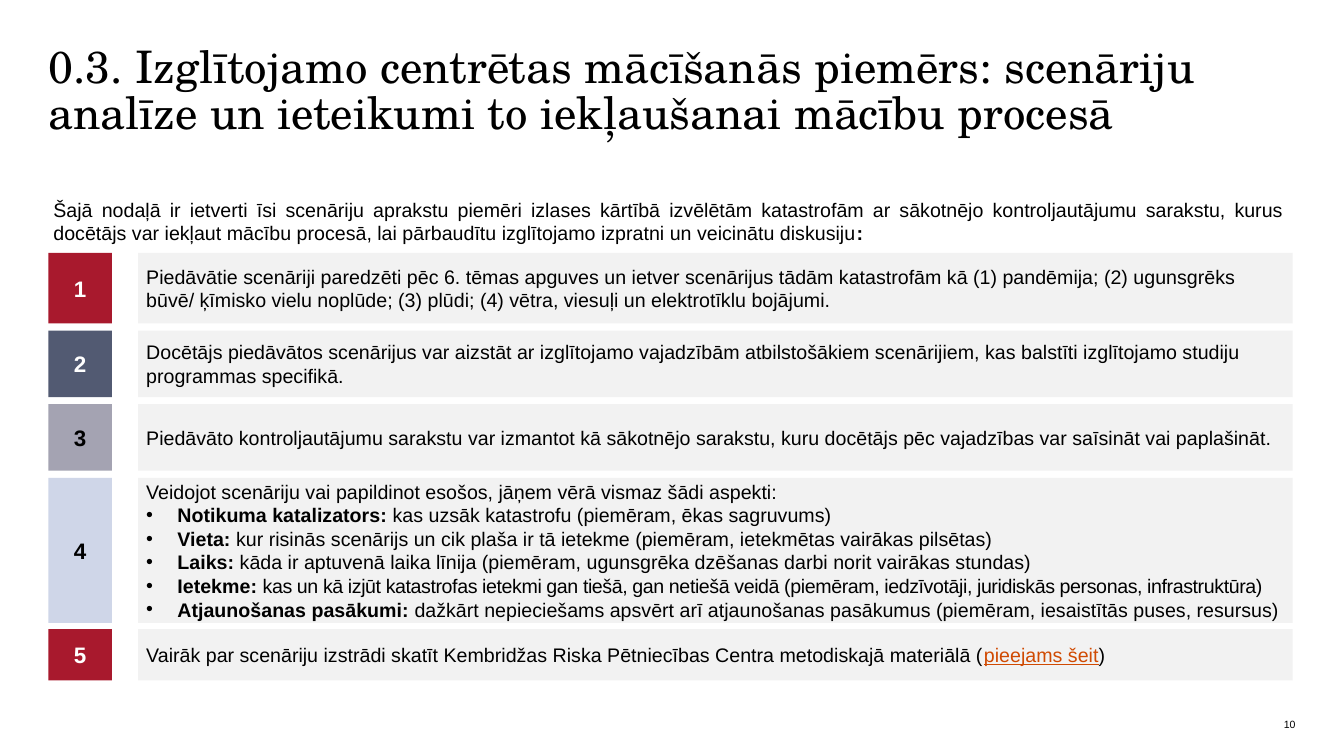
from lxml.etree import SubElement
from pptx import Presentation
from pptx.dml.color import RGBColor
from pptx.enum.shapes import MSO_SHAPE
from pptx.enum.text import MSO_ANCHOR, MSO_AUTO_SIZE, PP_ALIGN
from pptx.oxml.ns import qn
from pptx.util import Inches, Pt

TITLE = ("0.3. Izglītojamo centrētas mācīšanās piemērs: scenāriju analīze "
         "un ieteikumi to iekļaušanai mācību procesā")
INTRO = ("Šajā nodaļā ir ietverti īsi scenāriju aprakstu piemēri izlases kārtībā izvēlētām "
         "katastrofām ar sākotnējo kontroljautājumu sarakstu, kurus docētājs var iekļaut mācību "
         "procesā, lai pārbaudītu izglītojamo izpratni un veicinātu diskusiju")
PAGE_NUMBER = "10"

BOLD = {"bold": True}
LINK = {"color": "D04A02", "underline": True}
TIGHT = {"spacing": -30}

# A paragraph is a list of (text, format) runs; every paragraph after a row's first is a bullet.
ROWS = [
    # top, height, number fill, number colour, paragraphs
    (2.51, 0.70, "A8192D", "FFFFFF", [[(
        "Piedāvātie scenāriji paredzēti pēc 6. tēmas apguves un ietver scenārijus tādām "
        "katastrofām kā (1) pandēmija; (2) ugunsgrēks būvē/ ķīmisko vielu noplūde; (3) plūdi; "
        "(4) vētra, viesuļi un elektrotīklu bojājumi.", {})]]),
    (3.28, 0.66, "525A72", "FFFFFF", [[(
        "Docētājs piedāvātos scenārijus var aizstāt ar izglītojamo vajadzībām atbilstošākiem "
        "scenārijiem, kas balstīti izglītojamo studiju programmas specifikā.", {})]]),
    (4.01, 0.66, "A4A3B2", "000000", [[(
        "Piedāvāto kontroljautājumu sarakstu var izmantot kā sākotnējo sarakstu, kuru docētājs "
        "pēc vajadzības var saīsināt vai paplašināt.", {})]]),
    (4.74, 1.44, "CFD6E8", "000000", [
        [("Veidojot scenāriju vai papildinot esošos, jāņem vērā vismaz šādi aspekti:", {})],
        [("Notikuma katalizators: ", BOLD),
         ("kas uzsāk katastrofu (piemēram, ēkas sagruvums)", {})],
        [("Vieta: ", BOLD),
         ("kur risinās scenārijs un cik plaša ir tā ietekme "
          "(piemēram, ietekmētas vairākas pilsētas)", {})],
        [("Laiks: ", BOLD),
         ("kāda ir aptuvenā laika līnija "
          "(piemēram, ugunsgrēka dzēšanas darbi norit vairākas stundas)", {})],
        [("Ietekme: ", BOLD),
         ("kas un kā izjūt katastrofas ietekmi gan tiešā, gan netiešā veidā "
          "(piemēram, iedzīvotāji, juridiskās personas, infrastruktūra)", TIGHT)],
        [("Atjaunošanas pasākumi: ", BOLD),
         ("dažkārt nepieciešams apsvērt arī atjaunošanas pasākumus "
          "(piemēram, iesaistītās puses, resursus)", {})],
    ]),
    (6.24, 0.51, "A8192D", "FFFFFF", [[
        ("Vairāk par scenāriju izstrādi skatīt Kembridžas Riska Pētniecības Centra "
         "metodiskajā materiālā (", {}),
        ("pieejams šeit", LINK), (")", {})]]),
]

LEFT, NUMBER_WIDTH = 0.48, 0.63
TEXT_LEFT, TEXT_WIDTH = 1.37, 11.45
PADDING = 0.08
BULLET_INDENT = 0.31


def rgb(value):
    return RGBColor.from_string(value)


def add_run(paragraph, text, size=14, color="000000", name="Arial", spacing=None, **style):
    run = paragraph.add_run()
    run.text = text
    for attribute, value in {"size": Pt(size), "name": name, **style}.items():
        setattr(run.font, attribute, value)
    run.font.color.rgb = rgb(color)
    if spacing is not None:
        run.font._element.set("spc", str(spacing))


def prepare_frame(shape, anchor, padding=0):
    frame = shape.text_frame
    settings = {"word_wrap": True, "auto_size": MSO_AUTO_SIZE.NONE, "vertical_anchor": anchor}
    for side in ("left", "top", "right", "bottom"):
        settings[f"margin_{side}"] = Inches(padding)
    for attribute, value in settings.items():
        setattr(frame, attribute, value)
    return frame


def add_panel(slide, box, fill, paragraphs, align=PP_ALIGN.LEFT, anchor=MSO_ANCHOR.MIDDLE):
    """Add a borderless rectangle holding the given runs."""
    panel = slide.shapes.add_shape(MSO_SHAPE.RECTANGLE, *map(Inches, box))
    panel.shadow.inherit = False
    panel.fill.solid()
    panel.fill.fore_color.rgb = rgb(fill)
    panel.line.fill.background()
    frame = prepare_frame(panel, anchor, PADDING)
    for index, runs in enumerate(paragraphs):
        paragraph = frame.add_paragraph() if index else frame.paragraphs[0]
        paragraph.alignment = align
        if index:
            add_bullet(paragraph)
        for text, style in runs:
            add_run(paragraph, text, **style)


def add_bullet(paragraph):
    properties = paragraph._p.get_or_add_pPr()
    indent = Inches(BULLET_INDENT)
    properties.set("marL", str(indent))
    properties.set("indent", str(-indent))
    SubElement(properties, qn("a:buFont"), typeface="Arial")
    SubElement(properties, qn("a:buChar"), char="•")


def add_title(slide):
    title = slide.shapes.title
    title.left, title.top, title.width, title.height = map(Inches, (LEFT, 0.47, 12.37, 1.52))
    paragraph = prepare_frame(title, MSO_ANCHOR.TOP).paragraphs[0]
    paragraph.alignment = PP_ALIGN.LEFT
    paragraph.line_spacing = 0.85
    add_run(paragraph, TITLE, size=32, name="TeX Gyre Schola")


def add_page_number(slide):
    box = slide.shapes.add_textbox(*map(Inches, (10.92, 7.1, 1.93, 0.15)))
    paragraph = prepare_frame(box, MSO_ANCHOR.BOTTOM).paragraphs[0]
    paragraph.alignment = PP_ALIGN.RIGHT
    add_run(paragraph, PAGE_NUMBER, size=7.5)


def main():
    presentation = Presentation()
    presentation.slide_width, presentation.slide_height = Inches(13.33), Inches(7.5)
    slide = presentation.slides.add_slide(presentation.slide_layouts[5])
    add_title(slide)
    add_panel(slide, (0.45, 1.88, 12.37, 4.87), "FFFFFF", [[(INTRO, {}), (":", BOLD)]],
              PP_ALIGN.JUSTIFY, MSO_ANCHOR.TOP)
    for number, (top, height, fill, color, paragraphs) in enumerate(ROWS, start=1):
        number_style = {"size": 16, "color": color, "bold": True}
        add_panel(slide, (LEFT, top, NUMBER_WIDTH, height), fill,
                  [[(str(number), number_style)]], PP_ALIGN.CENTER)
        add_panel(slide, (TEXT_LEFT, top, TEXT_WIDTH, height), "F2F2F2", paragraphs)
    add_page_number(slide)
    presentation.save("out.pptx")


if __name__ == "__main__":
    main()
